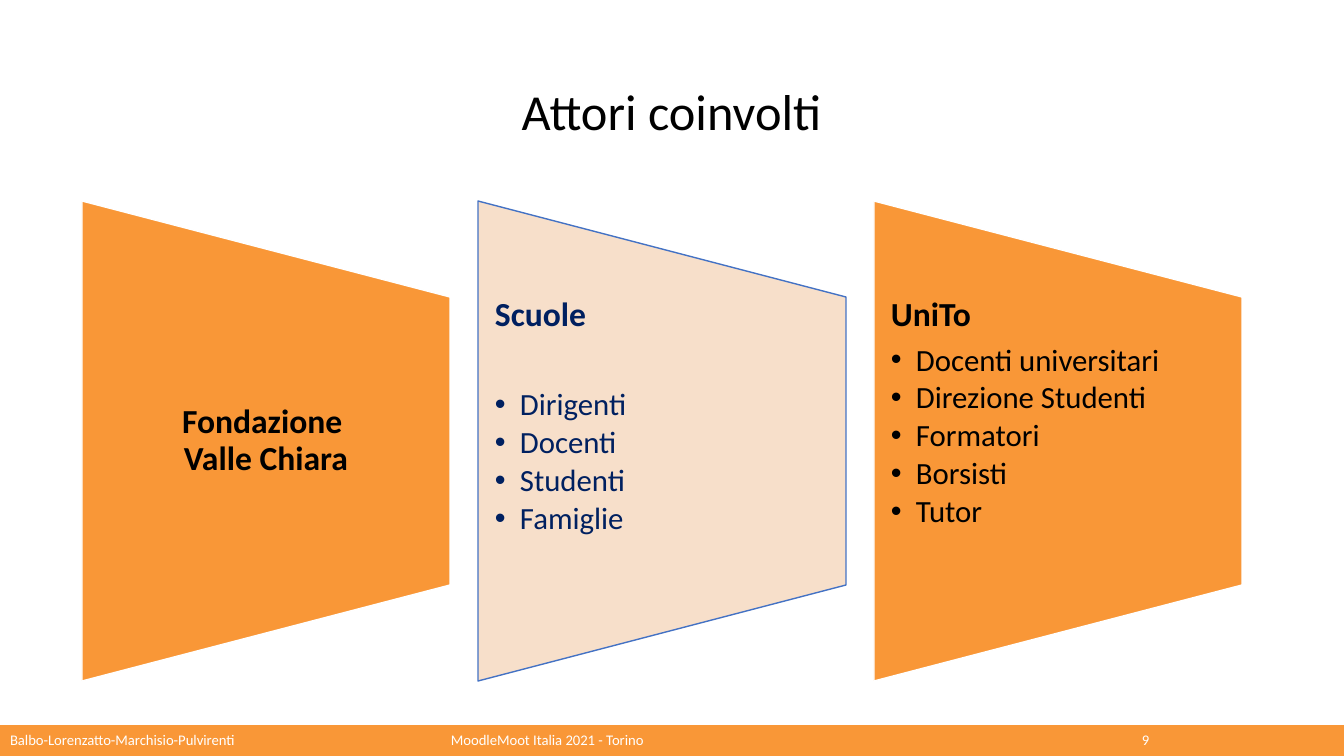
from pptx import Presentation
from pptx.dml.color import RGBColor
from pptx.enum.shapes import MSO_SHAPE as Shape
from pptx.enum.text import MSO_ANCHOR as Anchor, PP_ALIGN as Align
from pptx.oxml.ns import qn
from pptx.util import Pt
from lxml import etree

# Content
TITLE = "Attori coinvolti"
ACTORS = [
    {"name": "Fondazione \vValle Chiara", "members": [], "style": "strong"},
    {"name": "Scuole", "members": ["Dirigenti", "Docenti", "Studenti", "Famiglie"],
     "style": "light", "name_gap": 40},
    {"name": "UniTo", "members": ["Docenti universitari", "Direzione Studenti",
                                  "Formatori", "Borsisti", "Tutor"],
     "style": "strong"},
]
FOOTER = [  # text, left px, width px
    ("Balbo-Lorenzatto-Marchisio-Pulvirenti", 10, 400),
    ("MoodleMoot Italia 2021 - Torino", 451, 400),
    ("9", 1142, 60),
]

THEME = {
    "font": "Calibri",
    "orange": "F99737", "white": "FFFFFF", "black": "000000",
    "strong": {"fill": "F99737", "line": "FFFFFF", "text": "000000"},
    "light": {"fill": "F7DFCA", "line": "4472C4", "text": "002060"},
    "title": 36, "name": 24, "member": 22, "footer": 10.5,
}

# Geometry in px
SLIDE_W, SLIDE_H = 1344, 756
SCALE = 12192000 / SLIDE_W
BAND_TOP, BAND_H = 725, 31
PANEL_LEFT, PANEL_TOP, PANEL_W, PANEL_H, PANEL_PITCH = 82, 201, 368, 480, 396
TEXT_TOP, TEXT_H, TEXT_INSET = 297, 288, 17
BULLET_INDENT = 25


def emu(px):
    return round(px * SCALE)


def box(left, top, width, height):
    return [emu(value) for value in (left, top, width, height)]


def color(name):
    return RGBColor.from_string(name)


def add_shape(slide, kind, place, fill, line=None):
    shape = slide.shapes.add_shape(kind, *box(*place))
    shape.shadow.inherit = False
    shape.fill.solid()
    shape.fill.fore_color.rgb = color(fill)
    if line:
        shape.line.color.rgb = color(line)
        shape.line.width = Pt(1)
    else:
        shape.line.fill.background()
    return shape


def add_frame(slide, place, anchor=Anchor.MIDDLE, inset=0):
    frame = slide.shapes.add_textbox(*box(*place)).text_frame
    frame.word_wrap = True
    frame.vertical_anchor = anchor
    frame.margin_left = frame.margin_right = emu(inset)
    frame.margin_top = frame.margin_bottom = 0
    return frame


def write(frame, text, *, size, ink, bold=False, align=Align.LEFT,
          after=0, bullet=False):
    first = frame.paragraphs[0]
    paragraph = frame.add_paragraph() if first.text else first
    paragraph.text = text
    paragraph.alignment = align
    paragraph.line_spacing = 0.9
    paragraph.space_before = Pt(0)
    paragraph.space_after = Pt(after)
    if bullet:
        properties = paragraph._p.get_or_add_pPr()
        properties.set("marL", str(emu(BULLET_INDENT)))
        properties.set("indent", str(-emu(BULLET_INDENT)))
        etree.SubElement(properties, qn("a:buFont"), typeface="Arial")
        etree.SubElement(properties, qn("a:buChar"), char="•")
    for run in paragraph.runs:
        run.font.name = THEME["font"]
        run.font.size = Pt(size)
        run.font.bold = bold
        run.font.color.rgb = color(ink)


def add_actor(slide, index, actor):
    style = THEME[actor["style"]]
    left = PANEL_LEFT + index * PANEL_PITCH
    # The preset lies on its side, so width and height swap about the centre
    shift = (PANEL_H - PANEL_W) // 2
    panel = add_shape(slide, Shape.FLOWCHART_MANUAL_OPERATION,
                      (left - shift, PANEL_TOP + shift, PANEL_H, PANEL_W),
                      style["fill"], style["line"])
    panel.rotation = 270

    members = actor["members"]
    frame = add_frame(slide, (left, TEXT_TOP, PANEL_W, TEXT_H),
                      Anchor.TOP if members else Anchor.MIDDLE, TEXT_INSET)
    write(frame, actor["name"], size=THEME["name"], ink=style["text"], bold=True,
          align=Align.LEFT if members else Align.CENTER,
          after=actor.get("name_gap", 8) if members else 0)
    for member in members:
        write(frame, member, size=THEME["member"], ink=style["text"],
              after=3.3, bullet=True)


def main():
    presentation = Presentation()
    presentation.slide_width, presentation.slide_height = emu(SLIDE_W), emu(SLIDE_H)
    slide = presentation.slides.add_slide(presentation.slide_layouts[6])

    # Footer band
    add_shape(slide, Shape.RECTANGLE, (0, BAND_TOP, SLIDE_W, BAND_H), THEME["orange"])
    for text, left, width in FOOTER:
        write(add_frame(slide, (left, BAND_TOP, width, BAND_H)), text,
              size=THEME["footer"], ink=THEME["white"])

    # Title
    write(add_frame(slide, (92, 74, 1159, 80)), TITLE,
          size=THEME["title"], ink=THEME["black"], align=Align.CENTER)

    # Actor panels
    for index, actor in enumerate(ACTORS):
        add_actor(slide, index, actor)

    presentation.save("out.pptx")


if __name__ == "__main__":
    main()
